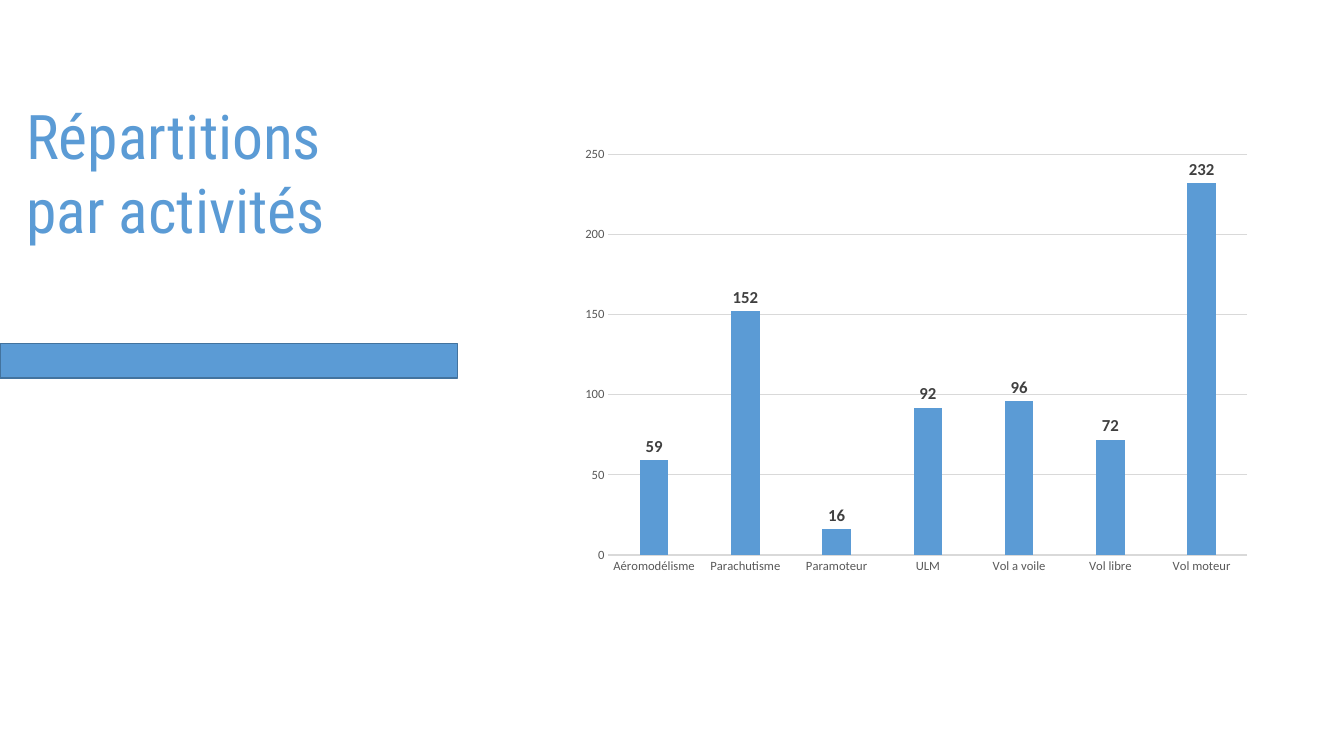
from pptx import Presentation
from pptx.chart.data import CategoryChartData
from pptx.dml.color import RGBColor
from pptx.enum.chart import XL_CHART_TYPE, XL_LABEL_POSITION, XL_TICK_MARK
from pptx.enum.shapes import MSO_SHAPE
from pptx.enum.text import MSO_ANCHOR, MSO_AUTO_SIZE, PP_ALIGN
from pptx.util import Pt

COLUMNS = XL_CHART_TYPE.COLUMN_CLUSTERED
OUTSIDE_END = XL_LABEL_POSITION.OUTSIDE_END
NO_TICK = XL_TICK_MARK.NONE
RECT = MSO_SHAPE.RECTANGLE

# Content
TITLE = ["Répartitions", "par activités"]
ACTIVITIES = {
    "Aéromodélisme": 59,
    "Parachutisme": 152,
    "Paramoteur": 16,
    "ULM": 92,
    "Vol a voile": 96,
    "Vol libre": 72,
    "Vol moteur": 232,
}

# Places in points: left, top, width, height
SLIDE_SIZE = (960, 540)
TITLE_BOX = (11.5, 66.25, 342, 113.75)
BAND_BOX = (0, 245.5, 327, 24.5)
CHART_BOX = (408.25, 98.65, 492.5, 317.5)

THEME = {
    "accent": RGBColor(0x5B, 0x9B, 0xD5),
    "accent_edge": RGBColor(0x43, 0x73, 0x9E),
    "grid": RGBColor(0xD9, 0xD9, 0xD9),
    "axis_text": RGBColor(0x59, 0x59, 0x59),
    "label_text": RGBColor(0x40, 0x40, 0x40),
    "title_font": "Roboto Condensed",
    "chart_font": "Calibri",
    "title_size": Pt(44),
    "chart_size": Pt(10),
    "axis_size": Pt(9),
    "label_size": Pt(12),
    "band_line": Pt(1),
    "grid_line": Pt(0.75),
}


def points(box):
    return [Pt(v) for v in box]


def style(obj, **values):
    for name, value in values.items():
        setattr(obj, name, value)


def style_font(font, name, size, color, bold=False):
    style(font, name=name, size=size, bold=bold)
    font.color.rgb = color


def style_line(line, color, width):
    line.color.rgb = color
    line.width = width


def add_title(s):
    sp = s.shapes.title
    style(sp, **dict(zip(("left", "top", "width", "height"), points(TITLE_BOX))))
    tf = sp.text_frame
    style(tf, word_wrap=True, auto_size=MSO_AUTO_SIZE.NONE,
          vertical_anchor=MSO_ANCHOR.TOP)
    tf.text = "\n".join(TITLE)
    for p in tf.paragraphs:
        style(p, alignment=PP_ALIGN.LEFT, line_spacing=1.0,
              space_before=Pt(0), space_after=Pt(0))
        for r in p.runs:
            style_font(r.font, THEME["title_font"], THEME["title_size"],
                       THEME["accent"])


def add_band(s):
    sp = s.shapes.add_shape(RECT, *points(BAND_BOX))
    sp.shadow.inherit = False
    sp.fill.solid()
    sp.fill.fore_color.rgb = THEME["accent"]
    style_line(sp.line, THEME["accent_edge"], THEME["band_line"])


def add_activity_chart(s):
    data = CategoryChartData()
    data.categories = list(ACTIVITIES)
    data.add_series("Series 1", list(ACTIVITIES.values()))
    chart = s.shapes.add_chart(COLUMNS, *points(CHART_BOX), data).chart
    style(chart, has_legend=False, has_title=False)
    style(chart.font, name=THEME["chart_font"], size=THEME["chart_size"])

    # Axes
    for axis in (chart.category_axis, chart.value_axis):
        style(axis, major_tick_mark=NO_TICK, minor_tick_mark=NO_TICK)
        style_font(axis.tick_labels.font, THEME["chart_font"],
                   THEME["axis_size"], THEME["axis_text"])
    value_axis = chart.value_axis
    style(value_axis, minimum_scale=0, maximum_scale=250, major_unit=50)
    value_axis.format.line.fill.background()
    for line in (chart.category_axis.format.line,
                 value_axis.major_gridlines.format.line):
        style_line(line, THEME["grid"], THEME["grid_line"])

    # Columns and their values
    plot = chart.plots[0]
    style(plot, gap_width=219, overlap=-27, vary_by_categories=False)
    series = plot.series[0]
    series.format.fill.solid()
    series.format.fill.fore_color.rgb = THEME["accent"]
    labels = series.data_labels
    style(labels, show_value=True, position=OUTSIDE_END)
    style_font(labels.font, THEME["chart_font"], THEME["label_size"],
               THEME["label_text"], bold=True)


def main():
    prs = Presentation()
    prs.slide_width, prs.slide_height = points(SLIDE_SIZE)
    s = prs.slides.add_slide(prs.slide_layouts[5])
    add_title(s)
    add_band(s)
    add_activity_chart(s)
    prs.save("out.pptx")


if __name__ == "__main__":
    main()
